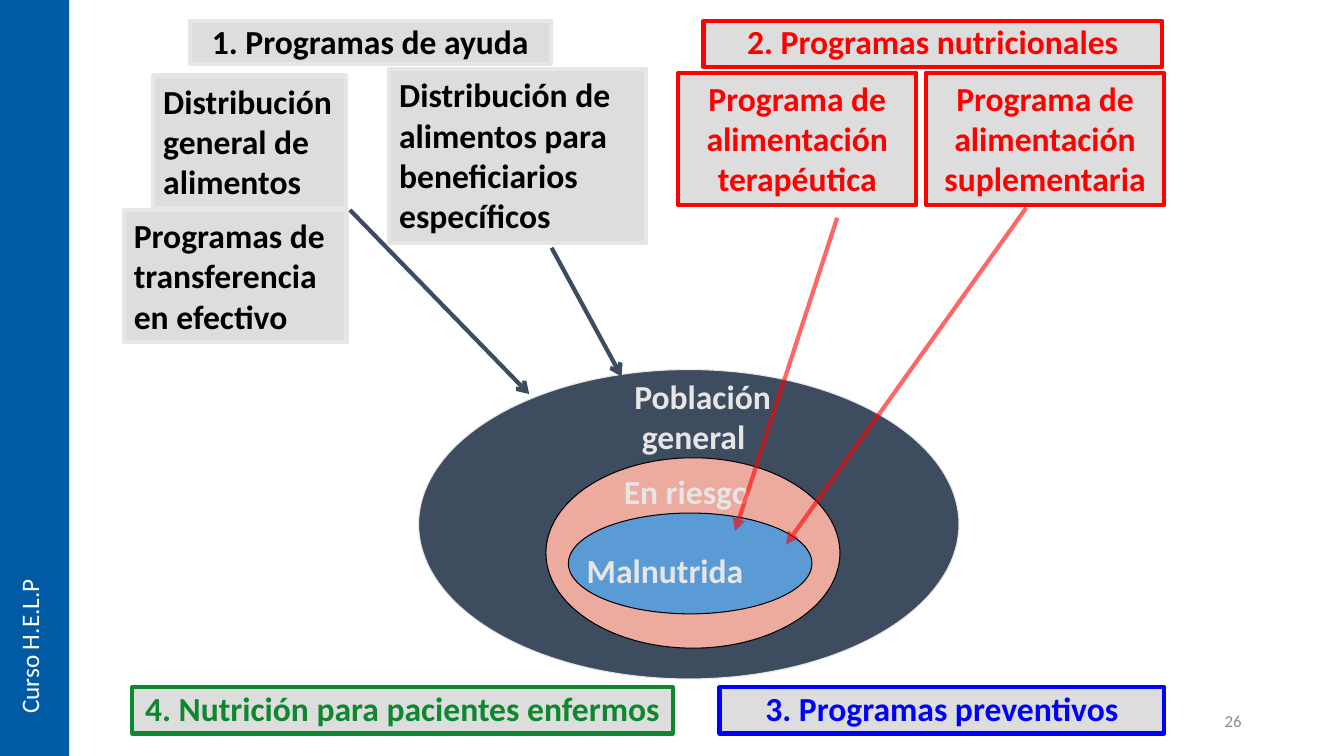
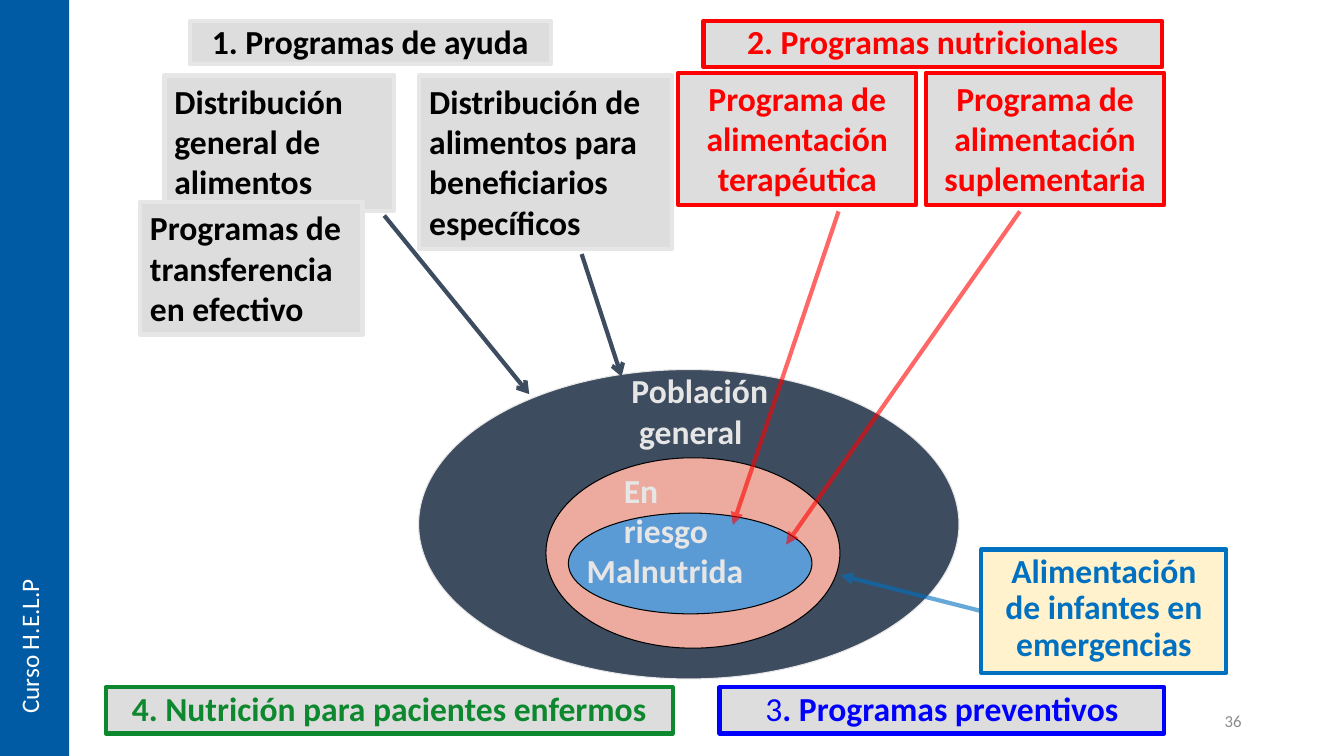
import dataclasses

import lxml.etree
import pptx
import pptx.dml.color
import pptx.enum.shapes
import pptx.enum.text
import pptx.oxml.ns
import pptx.util

Pt = pptx.util.Pt
SHAPE = pptx.enum.shapes.MSO_SHAPE
ALIGN = pptx.enum.text.PP_ALIGN
ANCHOR = pptx.enum.text.MSO_ANCHOR


@dataclasses.dataclass(frozen=True)
class Theme:
    font: str = "Calibri"
    body_size: int = 24
    side_size: int = 18
    number_size: int = 12
    border: float = 3
    outline: float = 0.75
    black: str = "000000"
    white: str = "FFFFFF"
    pale: str = "E7E6E6"
    panel: str = "DDDDDD"
    slate: str = "3D4C5F"
    salmon: str = "ECAB9E"
    sky: str = "5B9BD5"
    red: str = "FF0000"
    green: str = "0E882E"
    blue: str = "0000FF"
    cream: str = "FFF2CC"
    azure: str = "0070C0"
    band: str = "005BA4"
    number: str = "8C8C8C"


THEME = Theme()


# Formatting helpers
def rgb(value):
    return pptx.dml.color.RGBColor.from_string(value)


def apply_format(target, values):
    for name, value in values.items():
        setattr(target, name, value)


def add_element(parent, tag, **attributes):
    return lxml.etree.SubElement(parent, pptx.oxml.ns.qn(tag), attributes)


def write_text(frame, paragraphs, color, size=THEME.body_size, bold=True,
               frame_format=None, para_format=None):
    """Each paragraph is a string or a list of (text, bold) pairs."""
    apply_format(frame, {"word_wrap": True, "vertical_anchor": ANCHOR.TOP,
                         **(frame_format or {})})
    for index, content in enumerate(paragraphs):
        para = frame.paragraphs[0] if index == 0 else frame.add_paragraph()
        apply_format(para, {"alignment": ALIGN.LEFT, **(para_format or {})})
        pairs = [(content, bold)] if isinstance(content, str) else content
        for text, weight in pairs:
            span = para.add_run()
            span.text = text
            apply_format(span.font, {"name": THEME.font, "size": Pt(size),
                                     "bold": weight})
            span.font.color.rgb = rgb(color)


# Element kinds
def add_shape(page, kind, place, fill, line=None, width=THEME.outline):
    shape = page.shapes.add_shape(kind, *map(Pt, place))
    shape.shadow.inherit = False
    shape.fill.solid()
    shape.fill.fore_color.rgb = rgb(fill)
    if line is None:
        shape.line.fill.background()
    else:
        shape.line.color.rgb = rgb(line)
        shape.line.width = Pt(width)
    return shape


def add_panel(page, place, content, color, line=None, fill=THEME.panel,
              align=ALIGN.CENTER, spacing=1.0):
    box = add_shape(page, SHAPE.RECTANGLE, place, fill, line or color, THEME.border)
    write_text(box.text_frame, [content], color,
               para_format={"alignment": align, "line_spacing": spacing})


def add_heading(page, place, content, color, line=None, fill=THEME.panel):
    add_panel(page, place, content, color, line, fill, spacing=0.9)


def add_aid_panel(page, place, content):
    add_panel(page, place, content, THEME.black, THEME.pale, align=ALIGN.LEFT)


def add_label(page, place, paragraphs, color=THEME.pale, **options):
    box = page.shapes.add_textbox(*map(Pt, place))
    write_text(box.text_frame, paragraphs, color, **options)
    return box


def add_arrow(page, ends, color, head="triangle", opacity=None):
    arrow = page.shapes.add_connector(
        pptx.enum.shapes.MSO_CONNECTOR.STRAIGHT, *map(Pt, ends))
    arrow.line.color.rgb = rgb(color)
    arrow.line.width = Pt(THEME.border)
    properties = arrow.line._get_or_add_ln()
    if opacity is not None:
        tint = properties.find(".//" + pptx.oxml.ns.qn("a:srgbClr"))
        add_element(tint, "a:alpha", val=str(opacity * 1000))
    add_element(properties, "a:tailEnd", type=head)
    add_element(arrow._element.spPr, "a:effectLst")


# Parts of the diagram
def draw_population(page, layout):
    for place, fill, line in (
            ((299, 264, 386, 221), THEME.slate, THEME.pale),
            ((390, 327, 210, 136), THEME.salmon, THEME.black),
            ((406, 366.5, 174, 72), THEME.sky, THEME.black)):
        add_shape(page, SHAPE.OVAL, place, fill, line)
    general = add_label(page, layout["general_label"], ["Población", "general"])
    general.text_frame.paragraphs[1]._p.get_or_add_pPr().set("marL", str(Pt(5.4)))
    add_label(page, layout["risk_label"], ["En riesgo"])
    add_label(page, (412, 389, 166, 36), ["Malnutrida"])


def draw_aid(page, layout):
    add_heading(page, (135.5, 15, 258, 31), "1. Programas de ayuda",
                THEME.black, THEME.pale)
    for name, content in (
            ("distribution", "Distribución general de alimentos"),
            ("targeted", "Distribución de alimentos para beneficiarios específicos"),
            ("transfers", "Programas de transferencia en efectivo")):
        add_aid_panel(page, layout[name], content)
    for start, end in zip(layout["aid_starts"], ((378, 281.5), (444, 269))):
        add_arrow(page, start + end, THEME.slate, head="arrow")


def draw_nutrition(page, layout):
    add_heading(page, (502.5, 15, 327.5, 33), "2. Programas nutricionales", THEME.red)
    for column, kind in enumerate(("terapéutica", "suplementaria")):
        add_panel(page, (484.5 + 177 * column, 52, 170, 94.5),
                  f"Programa de alimentación {kind}", THEME.red)
    for ends in layout["nutrition_arrows"]:
        add_arrow(page, ends, THEME.red, opacity=60)


def draw_bottom(page, layout):
    left = layout["patients_left"]
    add_heading(page, (left, 491, 480.5 - left, 33),
                "4. Nutrición para pacientes enfermos", THEME.green)
    add_heading(page, (514, 491, 317.5, 33), layout["prevention"], THEME.blue)


def draw_infants(page):
    add_heading(page, (701, 392.5, 175, 88), "Alimentación de infantes en emergencias",
                THEME.azure, fill=THEME.cream)
    add_arrow(page, (701, 436.5, 600.5, 411), THEME.azure, opacity=60)


def draw_frame(page, number):
    add_shape(page, SHAPE.RECTANGLE, (0, 0, 49.5, 540), THEME.band)
    side = add_label(page, (6.5, 403, 36, 114), ["Curso H.E.L.P"], THEME.white,
                     size=THEME.side_size, bold=False,
                     frame_format={"word_wrap": False})
    side.text_frame._txBody.bodyPr.set("vert", "vert270")
    add_label(page, (678, 500.5, 216, 28.5), [number], THEME.number,
              size=THEME.number_size, bold=False,
              frame_format={"vertical_anchor": ANCHOR.MIDDLE},
              para_format={"alignment": ALIGN.RIGHT})


# What differs between the slides
LAYOUTS = (
    {
        "number": "26",
        "general_label": (446, 265, 136, 66),
        "risk_label": (438.5, 333, 136, 36),
        "distribution": (109.5, 54, 137.5, 94.5),
        "targeted": (278, 49.5, 183.5, 124),
        "transfers": (88.5, 150, 159, 94.5),
        "aid_starts": ((250, 150), (394, 177)),
        "nutrition_arrows": ((598, 155.5, 525, 379.5), (733, 148.5, 561.5, 389)),
        "patients_left": 94.5,
        "prevention": "3. Programas preventivos",
        "infants": False,
    },
    {
        "number": "36",
        "general_label": (444, 261, 136, 66),
        "risk_label": (438.5, 332, 102, 36),
        "distribution": (117.5, 54, 164, 96.5),
        "targeted": (299.5, 54, 180.5, 124),
        "transfers": (100, 144.5, 159, 94.5),
        "aid_starts": ((274.5, 154), (415.5, 181.5)),
        "nutrition_arrows": ((599, 151, 523.5, 375), (728.5, 151, 561.5, 389)),
        "patients_left": 75.5,
        "prevention": [("3", False), (". Programas preventivos", True)],
        "infants": True,
    },
)


def main():
    deck = pptx.Presentation()
    apply_format(deck, {"slide_width": Pt(960), "slide_height": Pt(540)})
    for layout in LAYOUTS:
        page = deck.slides.add_slide(deck.slide_layouts[6])
        for draw in (draw_population, draw_aid, draw_bottom, draw_nutrition):
            draw(page, layout)
        if layout["infants"]:
            draw_infants(page)
        draw_frame(page, layout["number"])
    deck.save("out.pptx")


if __name__ == "__main__":
    main()
